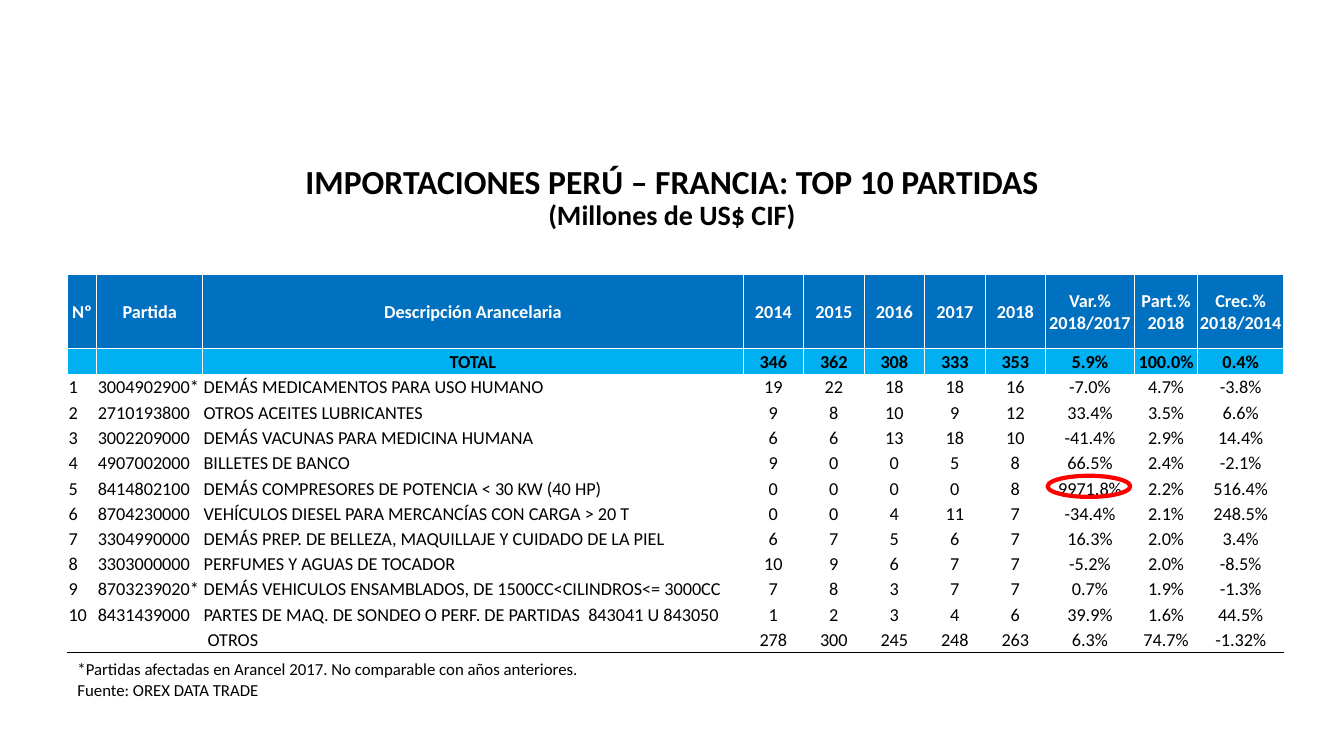
from lxml import etree
from pptx import Presentation
from pptx.dml.color import RGBColor
from pptx.enum.shapes import MSO_SHAPE
from pptx.enum.text import MSO_ANCHOR, MSO_AUTO_SIZE, PP_ALIGN
from pptx.oxml.ns import qn
from pptx.util import Pt

CENTER, LEFT = PP_ALIGN.CENTER, PP_ALIGN.LEFT
MIDDLE, BOTTOM = MSO_ANCHOR.MIDDLE, MSO_ANCHOR.BOTTOM
FIXED, GROW = MSO_AUTO_SIZE.NONE, MSO_AUTO_SIZE.SHAPE_TO_FIT_TEXT
ELLIPSE = MSO_SHAPE.OVAL

FONT = "Calibri"
COLORS = {"header": "0070C0", "total": "00B0F0", "white": "FFFFFF",
          "black": "000000", "highlight": "FF0000"}

TITLE = "IMPORTACIONES PERÚ – FRANCIA: TOP 10 PARTIDAS"
SUBTITLE = "(Millones de US$ CIF)"
NOTES = ["*Partidas afectadas en Arancel 2017. No comparable con años anteriores.",
         "Fuente: OREX DATA TRADE"]
HEADER = ("Nº", "Partida", "Descripción Arancelaria", "2014", "2015", "2016", "2017",
          "2018", "Var.% 2018/2017", "Part.% 2018", "Crec.% 2018/2014")
TOTAL = ("", "", "TOTAL", "346", "362", "308", "333", "353", "5.9%", "100.0%", "0.4%")
ITEMS = [
    ("3004902900*", "DEMÁS MEDICAMENTOS PARA USO HUMANO",
     "19", "22", "18", "18", "16", "-7.0%", "4.7%", "-3.8%"),
    ("2710193800", "OTROS ACEITES LUBRICANTES",
     "9", "8", "10", "9", "12", "33.4%", "3.5%", "6.6%"),
    ("3002209000", "DEMÁS VACUNAS PARA MEDICINA HUMANA",
     "6", "6", "13", "18", "10", "-41.4%", "2.9%", "14.4%"),
    ("4907002000", "BILLETES DE BANCO",
     "9", "0", "0", "5", "8", "66.5%", "2.4%", "-2.1%"),
    ("8414802100", "DEMÁS COMPRESORES DE POTENCIA < 30 KW (40 HP)",
     "0", "0", "0", "0", "8", "9971.8%", "2.2%", "516.4%"),
    ("8704230000", "VEHÍCULOS DIESEL PARA MERCANCÍAS CON CARGA > 20 T",
     "0", "0", "4", "11", "7", "-34.4%", "2.1%", "248.5%"),
    ("3304990000", "DEMÁS PREP. DE BELLEZA, MAQUILLAJE Y CUIDADO DE LA PIEL",
     "6", "7", "5", "6", "7", "16.3%", "2.0%", "3.4%"),
    ("3303000000", "PERFUMES Y AGUAS DE TOCADOR",
     "10", "9", "6", "7", "7", "-5.2%", "2.0%", "-8.5%"),
    ("8703239020*", "DEMÁS VEHICULOS ENSAMBLADOS, DE 1500CC<CILINDROS<= 3000CC",
     "7", "8", "3", "7", "7", "0.7%", "1.9%", "-1.3%"),
    ("8431439000", "PARTES DE MAQ. DE SONDEO O PERF. DE PARTIDAS  843041 U 843050",
     "1", "2", "3", "4", "6", "39.9%", "1.6%", "44.5%"),
]
OTHERS = ("", "", "OTROS", "278", "300", "245", "248", "263", "6.3%", "74.7%", "-1.32%")

PX = 9144
SLIDE_SIZE = (1333, 750)
TITLE_BOX = (0, 154, 1333, 81)
NOTES_BOX = (67, 649, 614, 50)
TABLE_LEFT, TABLE_TOP = 67, 272
COLUMN_WIDTHS = [29, 105, 536] + [60] * 5 + [88, 63, 85]
HEADER_HEIGHT, ROW_HEIGHT = 74, 25
FIRST_ITEM_HEIGHT = 26
OUTLIER_BOX = (1039, 472, 82, 21)
DESCRIPTION_COLUMN = 2
OTHERS_INDENT = 5


def px(*lengths):
    return [length * PX for length in lengths]


def write(paragraph, text, size=13, color="black", bold=False, align=LEFT, spacing=None):
    paragraph.alignment = align
    paragraph.line_spacing = spacing
    if not text:
        etree.SubElement(paragraph._p, qn("a:endParaRPr"), sz=str(size * 100))
        return
    run = paragraph.add_run()
    run.text = text
    run.font.name = FONT
    run.font.size = Pt(size)
    run.font.bold = bold
    run.font.color.rgb = RGBColor.from_string(COLORS[color])


def add_borders(cell, bottom):
    properties = cell._tc.get_or_add_tcPr()
    for side, color in (("L", "white"), ("R", "white"), ("T", "white"), ("B", bottom)):
        line = etree.SubElement(properties, qn(f"a:ln{side}"), w=str(Pt(0.5)))
        fill = etree.SubElement(line, qn("a:solidFill"))
        etree.SubElement(fill, qn("a:srgbClr"), val=COLORS[color])


def add_title(slide):
    title = slide.shapes.title
    title.left, title.top, title.width, title.height = px(*TITLE_BOX)
    frame = title.text_frame
    frame.vertical_anchor = BOTTOM
    frame.auto_size = FIXED
    for text, size in ((TITLE, 24), (SUBTITLE, 20)):
        paragraph = frame.paragraphs[0] if text == TITLE else frame.add_paragraph()
        write(paragraph, text, size=size, bold=True, align=CENTER, spacing=0.9)


def add_notes(slide):
    frame = slide.shapes.add_textbox(*px(*NOTES_BOX)).text_frame
    frame.word_wrap = True
    frame.auto_size = GROW
    for index, text in enumerate(NOTES):
        write(frame.add_paragraph() if index else frame.paragraphs[0], text, size=12)


def add_imports_table(slide):
    numbered = [(str(number), *item) for number, item in enumerate(ITEMS, 1)]
    rows = [HEADER, TOTAL, *numbered, OTHERS]
    heights = [HEADER_HEIGHT, ROW_HEIGHT, FIRST_ITEM_HEIGHT]
    heights += [ROW_HEIGHT] * (len(rows) - len(heights))
    table = slide.shapes.add_table(
        len(rows), len(HEADER),
        *px(TABLE_LEFT, TABLE_TOP, sum(COLUMN_WIDTHS), sum(heights))).table
    table.first_row = table.horz_banding = False
    for column, width in zip(table.columns, px(*COLUMN_WIDTHS)):
        column.width = width
    for row, height in zip(table.rows, px(*heights)):
        row.height = height
    for r, values in enumerate(rows):
        fill = {0: "header", 1: "total"}.get(r, "white")
        for c, text in enumerate(values):
            cell = table.cell(r, c)
            indent = OTHERS_INDENT if text == "OTROS" else 1
            cell.margin_left, cell.margin_right, cell.margin_top, cell.margin_bottom = px(
                indent, 1, 1, 0)
            cell.vertical_anchor = MIDDLE
            add_borders(cell, "black" if values is OTHERS else "white")
            cell.fill.solid()
            cell.fill.fore_color.rgb = RGBColor.from_string(COLORS[fill])
            write(cell.text_frame.paragraphs[0], text, bold=r < 2,
                  color="white" if r == 0 else "black",
                  align=CENTER if r < 2 or c > DESCRIPTION_COLUMN else LEFT)


def add_outlier_ring(slide):
    ring = slide.shapes.add_shape(ELLIPSE, *px(*OUTLIER_BOX))
    ring.shadow.inherit = False
    ring.fill.background()
    ring.line.color.rgb = RGBColor.from_string(COLORS["highlight"])
    ring.line.width = Pt(3)


def main():
    deck = Presentation()
    deck.slide_width, deck.slide_height = px(*SLIDE_SIZE)
    slide = deck.slides.add_slide(deck.slide_layouts[5])
    add_title(slide)
    add_notes(slide)
    add_imports_table(slide)
    add_outlier_ring(slide)
    deck.save("out.pptx")


if __name__ == "__main__":
    main()
